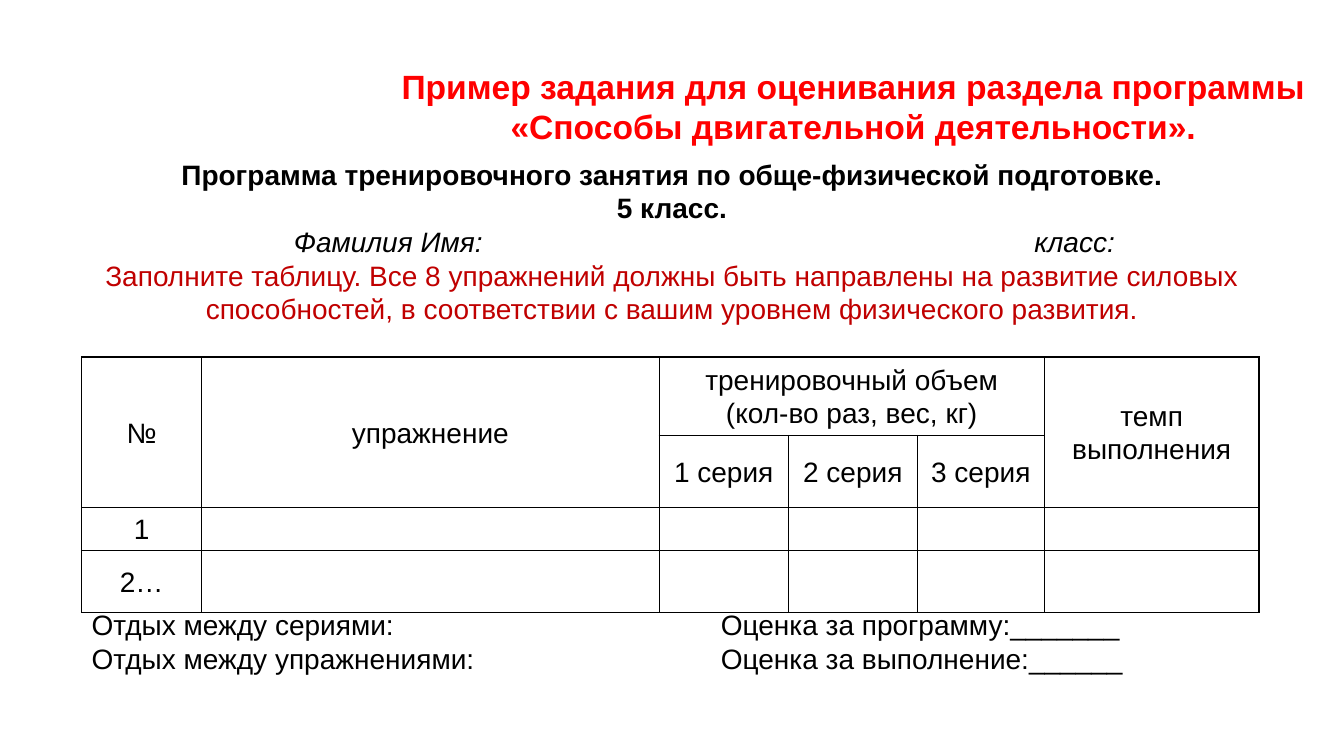
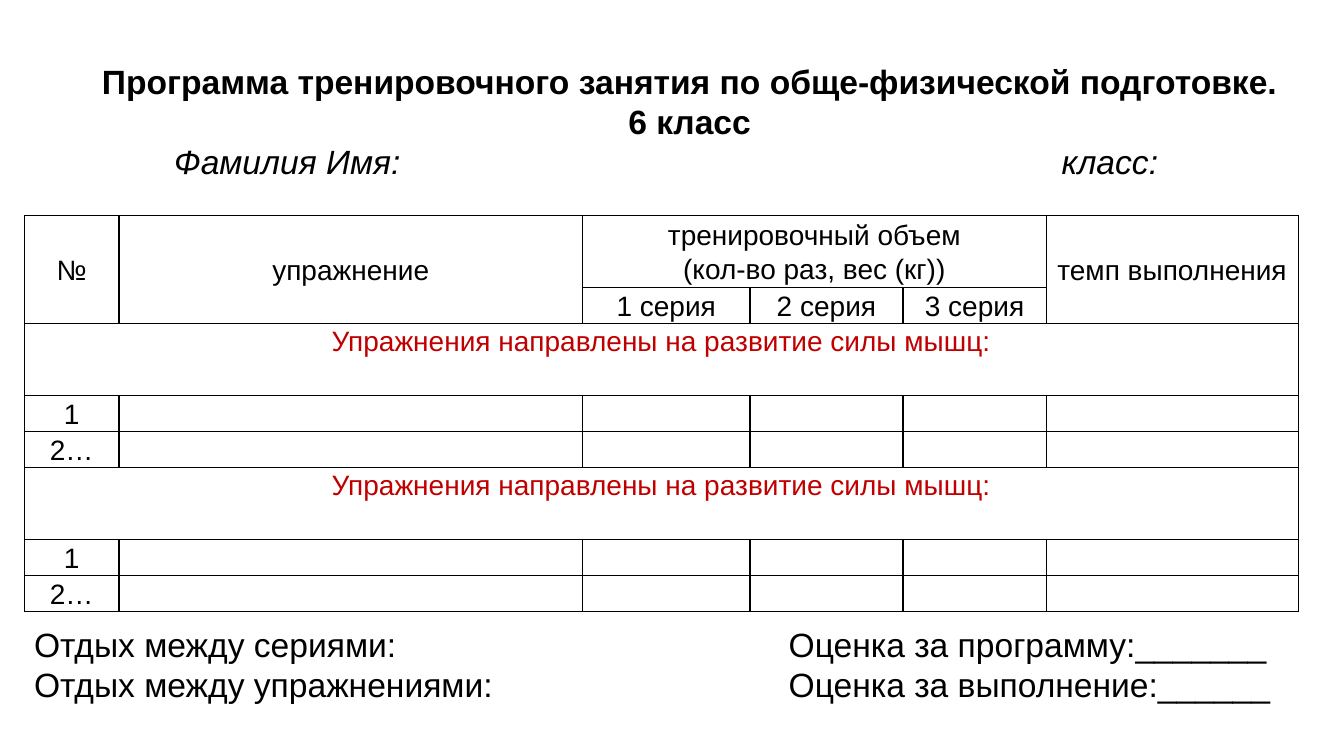
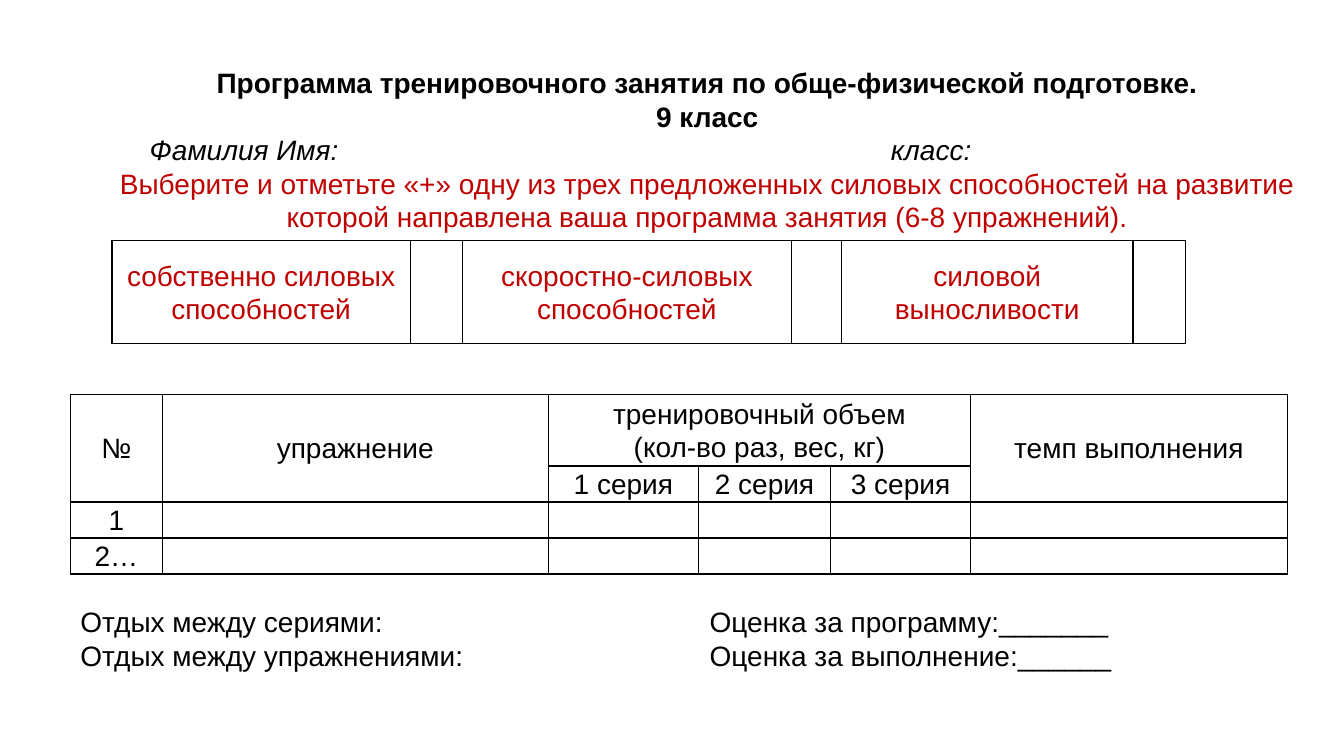
from dataclasses import dataclass

from lxml.etree import SubElement
from pptx import Presentation
from pptx.dml.color import RGBColor
from pptx.enum.text import MSO_ANCHOR, MSO_AUTO_SIZE, PP_ALIGN
from pptx.oxml.ns import qn
from pptx.util import Pt


@dataclass(frozen=True)
class Theme:
    font: str = "Arial"
    black: str = "000000"
    red: str = "FF0000"
    dark_red: str = "C00000"
    large: int = 24
    normal: int = 20
    line_height: float = 1.2
    table_spacing: float = 1.07
    cell_inset: float = 5.4
    border: int = 1
    row: float = 25.7


THEME = Theme()
PROGRAM = "Программа тренировочного занятия по обще-физической подготовке."
NAME_LINE = "\tФамилия Имя:\tкласс:"
VOLUME = "тренировочный объем\n(кол-во раз, вес, кг)"
MUSCLES = "Упражнения направлены на развитие силы мышц:"
BOX_INSET = 7.2


class Deck:
    def __init__(self, theme):
        self.theme = theme
        self.presentation = Presentation()
        self.presentation.slide_width = Pt(960)
        self.presentation.slide_height = Pt(540)
        self.slide = None

    # Text
    def style(self, paragraph, size, color=None, bold=False, italic=False):
        for run in paragraph.runs:
            run.font.name = self.theme.font
            run.font.size = Pt(size)
            run.font.bold = bold
            run.font.italic = italic
            run.font.color.rgb = RGBColor.from_string(color or self.theme.black)

    def add_tabs(self, paragraph, positions):
        tab_list = SubElement(paragraph._p.get_or_add_pPr(), qn("a:tabLst"))
        for position in positions:
            SubElement(tab_list, qn("a:tab"), pos=str(Pt(position)), algn="l")

    def new_slide(self, title, left, top, width, size, color=None):
        """Start a titled slide and return the y where its title text ends."""
        layout = self.presentation.slide_layouts[5]
        self.slide = self.presentation.slides.add_slide(layout)
        shape = self.slide.shapes.title
        lines = title.count("\n") + 1
        text_height = lines * size * self.theme.line_height
        shape.left, shape.top = Pt(left), Pt(top)
        shape.width, shape.height = Pt(width), Pt(text_height + BOX_INSET)
        frame = shape.text_frame
        frame.text = title
        frame.word_wrap = True
        frame.auto_size = MSO_AUTO_SIZE.NONE
        frame.vertical_anchor = MSO_ANCHOR.TOP
        for paragraph in frame.paragraphs:
            paragraph.alignment = PP_ALIGN.CENTER
            self.style(paragraph, size, color, bold=True)
        return top + text_height

    def text_box(self, left, top, width, size, lines, tabs, **formats):
        """Write lines; a line with tabs is left-aligned at the given x values."""
        height = len(lines) * size * self.theme.line_height + BOX_INSET
        shape = self.slide.shapes.add_textbox(Pt(left), Pt(top), Pt(width), Pt(height))
        frame = shape.text_frame
        frame.word_wrap = True
        frame.text = "\n".join(text for text, _ in lines)
        for paragraph, (text, look) in zip(frame.paragraphs, lines):
            if "\t" in text:
                paragraph.alignment = PP_ALIGN.LEFT
                self.add_tabs(paragraph, [x - left - BOX_INSET for x in tabs])
            else:
                paragraph.alignment = PP_ALIGN.CENTER
            self.style(paragraph, size, **look)

    def summary(self, left, top, width, size, grade_left):
        lines = ["Отдых между сериями:\tОценка за программу:_______",
                 "Отдых между упражнениями:\tОценка за выполнение:______"]
        self.text_box(left, top, width, size, [(line, {}) for line in lines],
                      [grade_left])

    # Tables
    def write_cell(self, cell, text, color=None, anchor=MSO_ANCHOR.MIDDLE):
        cell.text_frame.text = text
        cell.vertical_anchor = anchor
        for paragraph in cell.text_frame.paragraphs:
            paragraph.alignment = PP_ALIGN.CENTER
            paragraph.line_spacing = self.theme.table_spacing
            self.style(paragraph, self.theme.normal, color)

    def frame_cell(self, cell):
        cell.margin_left = cell.margin_right = Pt(self.theme.cell_inset)
        cell.margin_top = cell.margin_bottom = 0
        properties = cell._tc.get_or_add_tcPr()
        for side in ("a:lnL", "a:lnR", "a:lnT", "a:lnB"):
            line = SubElement(properties, qn(side), w=str(Pt(self.theme.border)))
            fill = SubElement(line, qn("a:solidFill"))
            SubElement(fill, qn("a:srgbClr"), val=self.theme.black)
        cell.fill.background()

    def grid(self, left, top, widths, heights):
        table = self.slide.shapes.add_table(
            len(heights), len(widths), Pt(left), Pt(top),
            Pt(sum(widths)), Pt(sum(heights))).table
        table.first_row = table.horz_banding = False
        for column, width in zip(table.columns, widths):
            column.width = Pt(width)
        for row, height in zip(table.rows, heights):
            row.height = Pt(height)
        for cell in table.iter_cells():
            self.frame_cell(cell)
        return table

    def exercise_table(self, left, top, widths, heights, volume, body):
        """Draw the exercise form; a body entry longer than a number is a band."""
        table = self.grid(left, top, widths, heights)
        for column, text in ((0, "№"), (1, "упражнение"), (5, "темп выполнения")):
            table.cell(0, column).merge(table.cell(1, column))
            self.write_cell(table.cell(0, column), text)
        table.cell(0, 2).merge(table.cell(0, 4))
        self.write_cell(table.cell(0, 2), volume)
        for series in (1, 2, 3):
            self.write_cell(table.cell(1, series + 1), f"{series} серия")
        for row, text in enumerate(body, start=2):
            if text == MUSCLES:
                table.cell(row, 0).merge(table.cell(row, 5))
                self.write_cell(table.cell(row, 0), text, self.theme.dark_red,
                                MSO_ANCHOR.TOP)
            else:
                self.write_cell(table.cell(row, 0), text)

    def choice_table(self, left, top, widths, height, choices):
        table = self.grid(left, top, widths, [height])
        for index, choice in enumerate(choices):
            self.write_cell(table.cell(0, 2 * index), choice, self.theme.dark_red)


def main():
    deck = Deck(THEME)
    row = THEME.row
    numbers = ["1", "2…"]
    bold, italic = {"bold": True}, {"italic": True}
    task = {"color": THEME.dark_red}

    # Grade 5
    deck.new_slide("Пример задания для оценивания раздела программы\n"
                   "«Способы двигательной деятельности».",
                   276.5, 43.2, 666, THEME.large, THEME.red)
    deck.text_box(0, 108.7, 960, THEME.normal, [
        (PROGRAM, bold),
        ("5 класс.", bold),
        (NAME_LINE, italic),
        ("Заполните таблицу. Все 8 упражнений должны быть направлены на развитие "
         "силовых способностей, в соответствии с вашим уровнем физического "
         "развития.", task)], [210, 739])
    deck.exercise_table(58.3, 255, [85.7, 326.9, 92.2, 92.2, 90.7, 153.4],
                        [56, 2 * row, 31, 43.9], VOLUME, numbers)
    deck.summary(58.3, 430.6, 891, THEME.normal, 515)

    # Grade 6
    title_end = deck.new_slide(f"{PROGRAM}\n6 класс", 57.6, 39.6, 870, THEME.large)
    deck.text_box(57.6, title_end, 870, THEME.large, [(NAME_LINE, italic)],
                  [124.5, 758.5])
    deck.exercise_table(17.3, 154, [67.7, 331.2, 119.5, 109.4, 102.2, 180],
                        [2 * row, row] + [2 * row, row, row] * 2,
                        "тренировочный объем\n(кол-во раз, вес (кг))",
                        [MUSCLES, *numbers] * 2)
    deck.summary(17.3, 442, 920, THEME.large, 563.5)

    # Grade 9
    title_end = deck.new_slide(f"{PROGRAM}\n9 класс", 50.4, 43.2, 909.6, THEME.normal)
    deck.text_box(50.4, title_end, 909.6, THEME.normal, [
        (NAME_LINE, italic),
        ("Выберите и отметьте «+» одну из трех предложенных силовых способностей "
         "на развитие которой направлена ваша программа занятия "
         "(6-8 упражнений).", task)], [107, 636.5])
    deck.choice_table(80, 172, [213.1, 37.4, 234.7, 36, 208.1, 37.4], 73.4,
                      ["собственно силовых способностей",
                       "скоростно-силовых способностей",
                       "силовой выносливости"])
    deck.exercise_table(50.4, 281.5, [65.5, 275.8, 107.3, 94.3, 100.1, 226.1],
                        [2 * row, row, row, row], VOLUME, numbers)
    deck.summary(50.4, 428.4, 870, THEME.normal, 507)

    deck.presentation.save("out.pptx")


if __name__ == "__main__":
    main()
